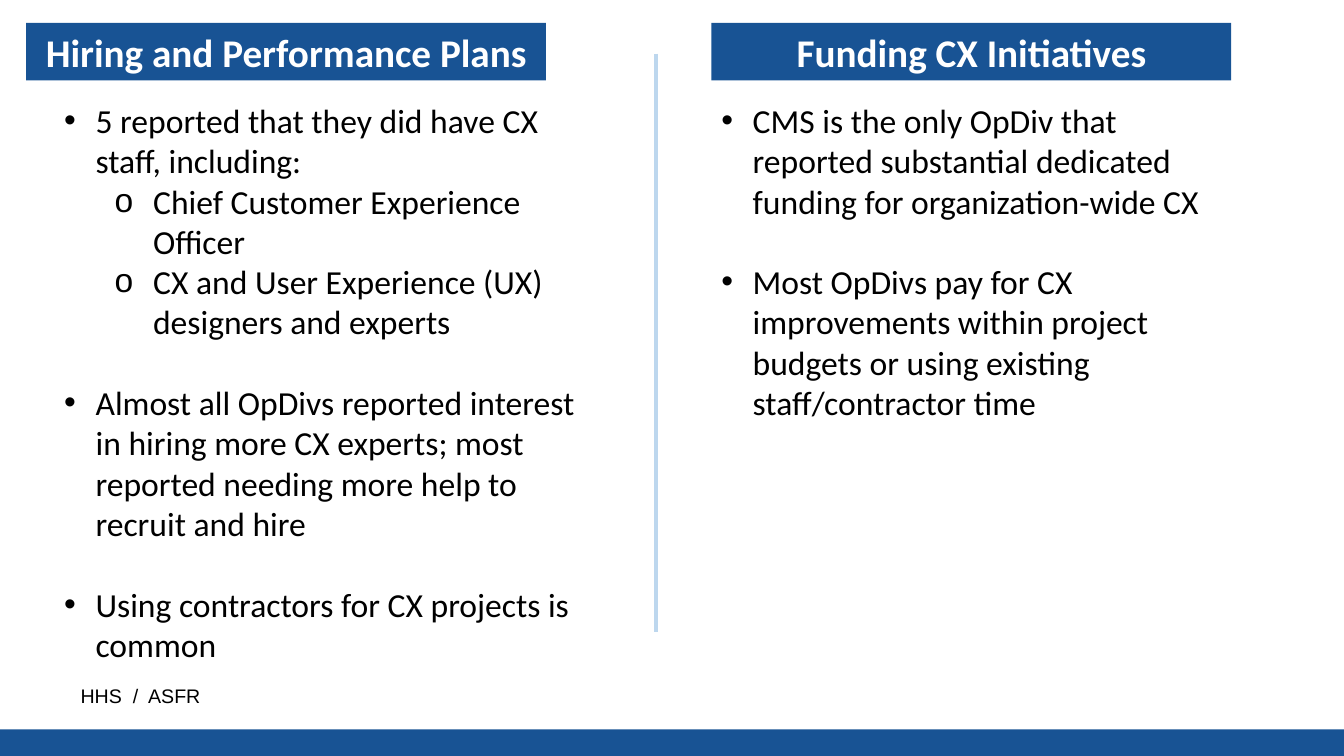
from lxml.etree import SubElement
from pptx import Presentation
from pptx.dml.color import RGBColor
from pptx.enum.shapes import MSO_CONNECTOR, MSO_SHAPE
from pptx.enum.text import MSO_ANCHOR, PP_ALIGN
from pptx.oxml.ns import qn
from pptx.util import Cm, Pt

WIDE, HIGH = 33.87, 19.05
HUES = {"navy": "185394", "sky": "BDD7EE", "black": "000000", "white": "FFFFFF"}
MARKS = [("•", 0.79, 0.79), ("o", 2.24, 0.97)]
TOPICS = [
    (0.66, 1.37, "Hiring and Performance Plans", [
        (0, "5 reported that they did have CX staff, including:"),
        (1, "Chief Customer Experience Officer"),
        (1, "CX and User Experience (UX) designers and experts"),
        (0, "Almost all OpDivs reported interest in hiring more CX experts; "
            "most reported needing more help to recruit and hire"),
        (0, "Using contractors for CX projects is common")], 15.65),
    (17.93, 17.93, "Funding CX Initiatives", [
        (0, "CMS is the only OpDiv that reported substantial dedicated "
            "funding for organization-wide CX"),
        (0, "Most OpDivs pay for CX improvements within project budgets "
            "or using existing staff/contractor time")], 9.5),
]


class Board:
    """Holds the style and the current slide, and draws each kind of element."""

    def __init__(self, slide):
        self.shapes = slide.shapes
        self.fonts = {
            "title": {"name": "Calibri", "size": Pt(28), "bold": True},
            "body": {"name": "Calibri", "size": Pt(24)},
            "foot": {"name": "Arial", "size": Pt(14)},
        }
        self.pitch = Pt(28.8)

    def hue(self, name):
        return RGBColor.from_string(HUES[name])

    def label(self, para, text, style, hue="black"):
        run = para.add_run()
        run.text = text
        for key, value in self.fonts[style].items():
            setattr(run.font, key, value)
        run.font.color.rgb = self.hue(hue)

    def bar(self, *place):
        shape = self.shapes.add_shape(MSO_SHAPE.RECTANGLE, *map(Cm, place))
        shape.shadow.inherit = False
        shape.fill.solid()
        shape.fill.fore_color.rgb = self.hue("navy")
        shape.line.fill.background()
        return shape

    def title(self, text, *place):
        frame = self.bar(*place).text_frame
        frame.word_wrap = True
        frame.vertical_anchor = MSO_ANCHOR.MIDDLE
        para = frame.paragraphs[0]
        para.alignment = PP_ALIGN.CENTER
        self.label(para, text, "title", "white")

    def box(self, *place):
        frame = self.shapes.add_textbox(*map(Cm, place)).text_frame
        frame.word_wrap = True
        return frame

    def note(self, text, *place):
        self.label(self.box(*place).paragraphs[0], text, "foot")

    def points(self, items, *place):
        frame = self.box(*place)
        for i, (level, text) in enumerate(items):
            para = frame.add_paragraph() if i else frame.paragraphs[0]
            looks = {"level": level, "line_spacing": self.pitch,
                     "space_before": self.pitch if i and not level else Pt(0)}
            for key, value in looks.items():
                setattr(para, key, value)
            self.mark(para, *MARKS[level])
            self.label(para, text, "body")

    def mark(self, para, sign, left, hang):
        props = para._p.get_or_add_pPr()
        props.set("marL", str(Cm(left)))
        props.set("indent", str(-Cm(hang)))
        SubElement(props, qn("a:buFont")).set("typeface", "Arial")
        SubElement(props, qn("a:buChar")).set("char", sign)

    def rule(self, *ends):
        line = self.shapes.add_connector(MSO_CONNECTOR.STRAIGHT, *map(Cm, ends))
        line.line.color.rgb = self.hue("sky")
        line.line.width = Pt(3)
        SubElement(line._element.spPr, qn("a:effectLst"))


def main():
    deck = Presentation()
    deck.slide_width, deck.slide_height = Cm(WIDE), Cm(HIGH)
    board = Board(deck.slides.add_slide(deck.slide_layouts[6]))
    board.bar(0, 18.38, WIDE, HIGH - 18.38)
    board.note("HHS  /  ASFR", 1.78, 17.12, 16.94, 0.86)
    board.rule(16.53, 1.35, 16.53, 15.92)
    for left, inset, head, items, tall in TOPICS:
        board.title(head, left, 0.58, 13.1, 1.45)
        board.points(items, inset, 2.39, 13.54, tall)
    deck.save("out.pptx")


if __name__ == "__main__":
    main()
